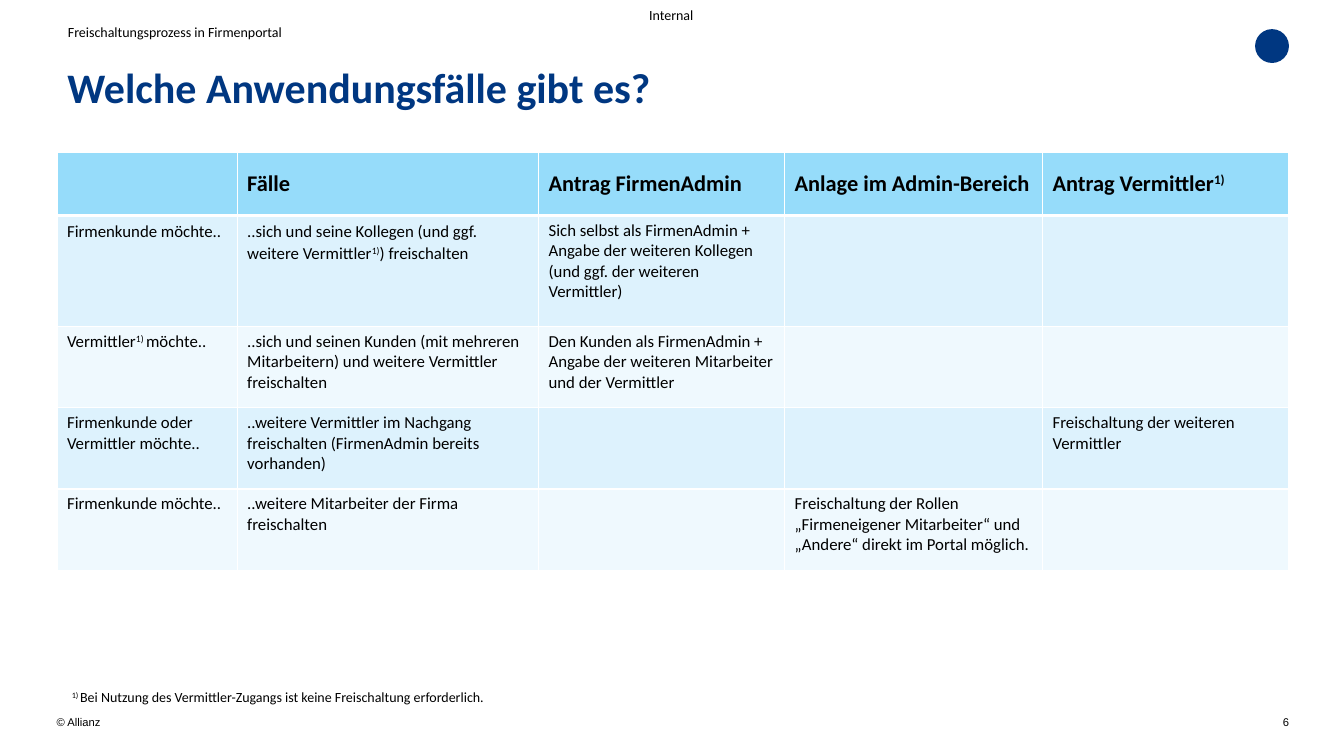
from lxml import etree
from pptx import Presentation
from pptx import util as u
from pptx.dml.color import RGBColor
from pptx.enum import shapes, text
from pptx.oxml.ns import qn

COLORS = {
    "navy": "003781",
    "black": "000000",
    "white": "FFFFFF",
    "header": "96DCFA",
    "band_dark": "DDF2FD",
    "band_light": "EFF9FE",
}


def write(tf, content, size=12, font="Calibri", color="black", bold=False,
          align=text.PP_ALIGN.LEFT, line_spacing=None, space_after=None):
    p = tf.paragraphs[0]
    p.alignment = align
    if line_spacing:
        p.line_spacing = line_spacing
    if space_after:
        p.space_after = u.Pt(space_after)
    for i, part in enumerate(content.split("^")):
        if not part:
            continue
        r = p.add_run()
        r.text = part
        r.font.size = u.Pt(size)
        r.font.name = font
        r.font.bold = bold
        r.font.color.rgb = RGBColor.from_string(COLORS[color])
        if i % 2:
            r.font._element.set("baseline", "30000")


def set_borders(cell, widths):
    tcPr = cell._tc.get_or_add_tcPr()
    for i, (side, width) in enumerate(widths.items()):
        ln = etree.Element(qn("a:" + side), w=str(u.Pt(width)))
        fill = etree.SubElement(ln, qn("a:solidFill"))
        etree.SubElement(fill, qn("a:srgbClr"), val=COLORS["white"])
        tcPr.insert(i, ln)


prs = Presentation()
prs.slide_width = u.Pt(960)
prs.slide_height = u.Pt(540)
s = prs.slides.add_slide(prs.slide_layouts[6])

RIGHT = text.PP_ALIGN.RIGHT
CENTER = text.PP_ALIGN.CENTER
TOP = text.MSO_ANCHOR.TOP
MIDDLE = text.MSO_ANCHOR.MIDDLE

labels = [
    ("© Allianz", (40.5, 511, 80, 10), TOP, dict(size=8, font="Arial")),
    ("Internal", (453, 0, 53, 21), MIDDLE, dict(size=10, align=CENTER)),
    ("Welche Anwendungsfälle gibt es?", (48.2, 44, 832, 37), TOP,
     dict(size=30, color="navy", bold=True)),
    ("6", (880.5, 511, 40.3, 29), TOP, dict(size=8, font="Arial", align=RIGHT)),
    ("Freischaltungsprozess in Firmenportal", (48.5, 16.5, 439, 12), TOP, dict(size=10)),
    ("^1) ^Bei Nutzung des Vermittler-Zugangs ist keine Freischaltung erforderlich.",
     (51.3, 492, 825, 19), TOP, dict(size=10)),
]
for content, box, anchor, fmt in labels:
    tf = s.shapes.add_textbox(*[u.Pt(v) for v in box]).text_frame
    tf.word_wrap = True
    tf.vertical_anchor = anchor
    tf.margin_left = tf.margin_top = tf.margin_right = tf.margin_bottom = 0
    write(tf, content, **fmt)

sp = s.shapes.add_shape(shapes.MSO_SHAPE.OVAL, u.Pt(896.5), u.Pt(20.8), u.Pt(24.2), u.Pt(24.2))
sp.shadow.inherit = False
sp.fill.solid()
sp.fill.fore_color.rgb = RGBColor.from_string(COLORS["navy"])
sp.line.fill.background()

rows = [
    ["", "Fälle", "Antrag FirmenAdmin", "Anlage im Admin-Bereich", "Antrag Vermittler^1)^"],
    ["Firmenkunde möchte..",
     "..sich und seine Kollegen (und ggf. weitere Vermittler^1)^) freischalten",
     "Sich selbst als FirmenAdmin + Angabe der weiteren Kollegen (und ggf. der weiteren Vermittler)",
     "", ""],
    ["Vermittler^1) ^möchte..",
     "..sich und seinen Kunden (mit mehreren Mitarbeitern) und weitere Vermittler freischalten",
     "Den Kunden als FirmenAdmin + Angabe der weiteren Mitarbeiter und der Vermittler",
     "", ""],
    ["Firmenkunde oder Vermittler möchte..",
     "..weitere Vermittler im Nachgang freischalten (FirmenAdmin bereits vorhanden)",
     "", "", "Freischaltung der weiteren Vermittler"],
    ["Firmenkunde möchte..", "..weitere Mitarbeiter der Firma freischalten", "",
     "Freischaltung der Rollen „Firmeneigener Mitarbeiter“ und „Andere“ direkt im Portal möglich.",
     ""],
]
col_widths = [128.7, 215.3, 175.8, 184.2, 175.8]
row_heights = [45.4, 79.2, 58.1, 58.1, 58.1]

table = s.shapes.add_table(len(rows), len(col_widths), u.Pt(40.7), u.Pt(108.5),
                           u.Pt(sum(col_widths)), u.Pt(sum(row_heights))).table
for column, width in zip(table.columns, col_widths):
    column.width = u.Pt(width)
for row, height in zip(table.rows, row_heights):
    row.height = u.Pt(height)

for i, row in enumerate(rows):
    band = "header" if i == 0 else "band_dark" if i % 2 else "band_light"
    for j, content in enumerate(row):
        cell = table.cell(i, j)
        cell.fill.solid()
        cell.fill.fore_color.rgb = RGBColor.from_string(COLORS[band])
        set_borders(cell, {"lnL": 1, "lnR": 1, "lnT": 3 if i == 1 else 1,
                           "lnB": 3 if i == 0 else 1})
        cell.vertical_anchor = MIDDLE if i == 0 else TOP
        fmt = dict(size=16, bold=True) if i == 0 else {}
        if i == 1 and j < 2:
            fmt = dict(line_spacing=1.07, space_after=8)
        write(cell.text_frame, content, **fmt)

prs.save("out.pptx")
